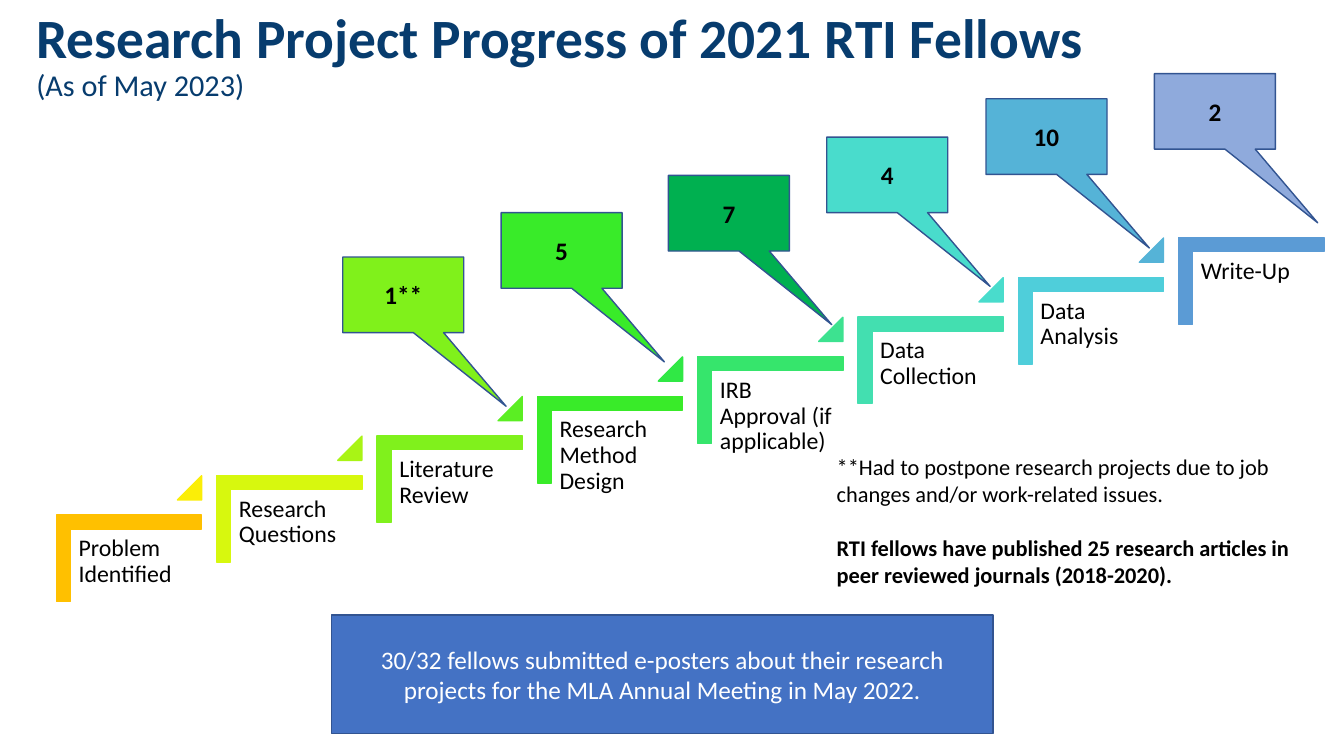
import pptx
import pptx.util
import pptx.dml.color
import pptx.enum.shapes
import pptx.enum.text

Inches = pptx.util.Inches
Pt = pptx.util.Pt
RGBColor = pptx.dml.color.RGBColor
SHAPE = pptx.enum.shapes.MSO_SHAPE
ALIGN = pptx.enum.text.PP_ALIGN
ANCHOR = pptx.enum.text.MSO_ANCHOR

NAVY = RGBColor(0x07, 0x3C, 0x6E)
BLACK = RGBColor(0, 0, 0)
WHITE = RGBColor(0xFF, 0xFF, 0xFF)
BANNER_BLUE = RGBColor(0x44, 0x72, 0xC4)
OUTLINE = RGBColor(0x32, 0x54, 0x91)

# Stage name, bracket colour, colour of the triangle leading to the next stage
STAGES = [
    ("Problem Identified", RGBColor(0xFF, 0xC0, 0x00), RGBColor(0xFB, 0xEE, 0x07)),
    ("Research Questions", RGBColor(0xD7, 0xF8, 0x0E), RGBColor(0xA9, 0xF4, 0x15)),
    ("Literature Review", RGBColor(0x80, 0xF1, 0x1C), RGBColor(0x5B, 0xEE, 0x23)),
    ("Research Method Design", RGBColor(0x39, 0xEB, 0x29), RGBColor(0x30, 0xE8, 0x45)),
    ("IRB Approval (if applicable)", RGBColor(0x36, 0xE5, 0x6C), RGBColor(0x3D, 0xE2, 0x90)),
    ("Data Collection", RGBColor(0x43, 0xDF, 0xB0), RGBColor(0x49, 0xDC, 0xCC)),
    ("Data Analysis", RGBColor(0x4F, 0xCE, 0xDA), RGBColor(0x55, 0xB3, 0xD7)),
    ("Write-Up", RGBColor(0x5B, 0x9B, 0xD5), None),
]
STEP_X, STEP_Y = 1.59, 0.393

# Count of fellows, left, top, colour
CALLOUTS = [
    ("1**", 3.4, 2.55, RGBColor(0x80, 0xF1, 0x1B)),
    ("5", 4.97, 2.11, RGBColor(0x39, 0xEB, 0x29)),
    ("7", 6.63, 1.74, RGBColor(0x00, 0xB0, 0x50)),
    ("4", 8.2, 1.36, RGBColor(0x49, 0xDC, 0xCC)),
    ("10", 9.78, 0.98, RGBColor(0x55, 0xB3, 0xD7)),
    ("2", 11.45, 0.73, RGBColor(0x8F, 0xAA, 0xDC)),
]


def format_para(para, size, color, bold=False, align=ALIGN.LEFT):
    para.alignment = align
    for span in para.runs:
        span.font.name = "Calibri"
        span.font.size = Pt(size)
        span.font.bold = bold
        span.font.color.rgb = color


def add_block(page, kind, left, top, width, height, fill, line, adjustments=()):
    block = page.shapes.add_shape(
        kind, Inches(left), Inches(top), Inches(width), Inches(height))
    block.shadow.inherit = False
    block.fill.solid()
    block.fill.fore_color.rgb = fill
    block.line.color.rgb = line
    block.line.width = Pt(1)
    for index, value in enumerate(adjustments):
        block.adjustments[index] = value
    return block


def write_centred(block, text, color, bold):
    frame = block.text_frame
    frame.word_wrap = True
    frame.vertical_anchor = ANCHOR.MIDDLE
    frame.text = text
    format_para(frame.paragraphs[0], 18, color, bold, ALIGN.CENTER)


def add_text_box(page, left, top, width, height):
    box = page.shapes.add_textbox(
        Inches(left), Inches(top), Inches(width), Inches(height))
    box.text_frame.word_wrap = True
    return box.text_frame


def add_title(page):
    title = page.shapes.title
    title.left, title.top = Inches(0.26), Inches(0.15)
    title.width, title.height = Inches(11.19), Inches(0.92)
    frame = title.text_frame
    frame.auto_size = pptx.enum.text.MSO_AUTO_SIZE.NONE
    frame.word_wrap = True
    frame.vertical_anchor = ANCHOR.BOTTOM
    frame.text = "Research Project Progress of 2021 RTI Fellows\n(As of May 2023)"
    heading, date = frame.paragraphs
    format_para(heading, 39.6, NAVY, bold=True)
    format_para(date, 21.6, NAVY)
    for para in frame.paragraphs:
        para.line_spacing = 0.9
        para.space_before = Pt(0)


def add_stage(page, index, name, color, next_color):
    dx, dy = index * STEP_X, -index * STEP_Y
    bracket = add_block(page, SHAPE.CORNER, 0.85 + dx, 4.82 + dy, 0.86, 1.44,
                        color, color, (0.161, 0.161))
    bracket.rotation = 90
    frame = add_text_box(page, 0.71 + dx, 5.25 + dy, 1.3, 1.14)
    frame.margin_left = frame.margin_right = Inches(0.07)
    frame.margin_top = frame.margin_bottom = Inches(0.07)
    frame.text = name
    frame.paragraphs[0].line_spacing = 0.9
    format_para(frame.paragraphs[0], 17, BLACK)
    if next_color is not None:
        add_block(page, SHAPE.ISOSCELES_TRIANGLE, 1.76 + dx, 4.72 + dy, 0.24, 0.24,
                  next_color, next_color, (1,))


def add_callout(page, count, left, top, color):
    callout = add_block(page, SHAPE.RECTANGULAR_CALLOUT, left, top, 1.2, 0.75,
                        color, OUTLINE, (0.85, 1.474))
    write_centred(callout, count, BLACK, True)


def add_notes_text(page):
    frame = add_text_box(page, 8.2, 4.18, 4.93, 2.26)
    frame.margin_top = Inches(0.32)
    frame.text = ("**Had to postpone research projects due to job changes "
                  "and/or work-related issues.\n"
                  "RTI fellows have published 25 research articles in "
                  "peer reviewed journals (2018-2020).")
    postponed, published = frame.paragraphs
    format_para(postponed, 16, BLACK)
    format_para(published, 16, BLACK, bold=True)
    published.space_before = Pt(19.5)


def main():
    deck = pptx.Presentation()
    deck.slide_width, deck.slide_height = Inches(13.33), Inches(7.5)
    page = deck.slides.add_slide(deck.slide_layouts[5])
    add_title(page)

    # Staircase of research stages
    for index, stage in enumerate(STAGES):
        add_stage(page, index, *stage)

    # Remarks and number of fellows at each stage
    add_notes_text(page)
    for callout in CALLOUTS:
        add_callout(page, *callout)

    # Banner at the bottom
    banner = add_block(page, SHAPE.RECTANGLE, 3.29, 6.1, 6.56, 1.18,
                       BANNER_BLUE, OUTLINE)
    write_centred(banner, "30/32 fellows submitted e-posters about their research "
                  "projects for the MLA Annual Meeting in May 2022.", WHITE, False)

    deck.save("out.pptx")


if __name__ == "__main__":
    main()
